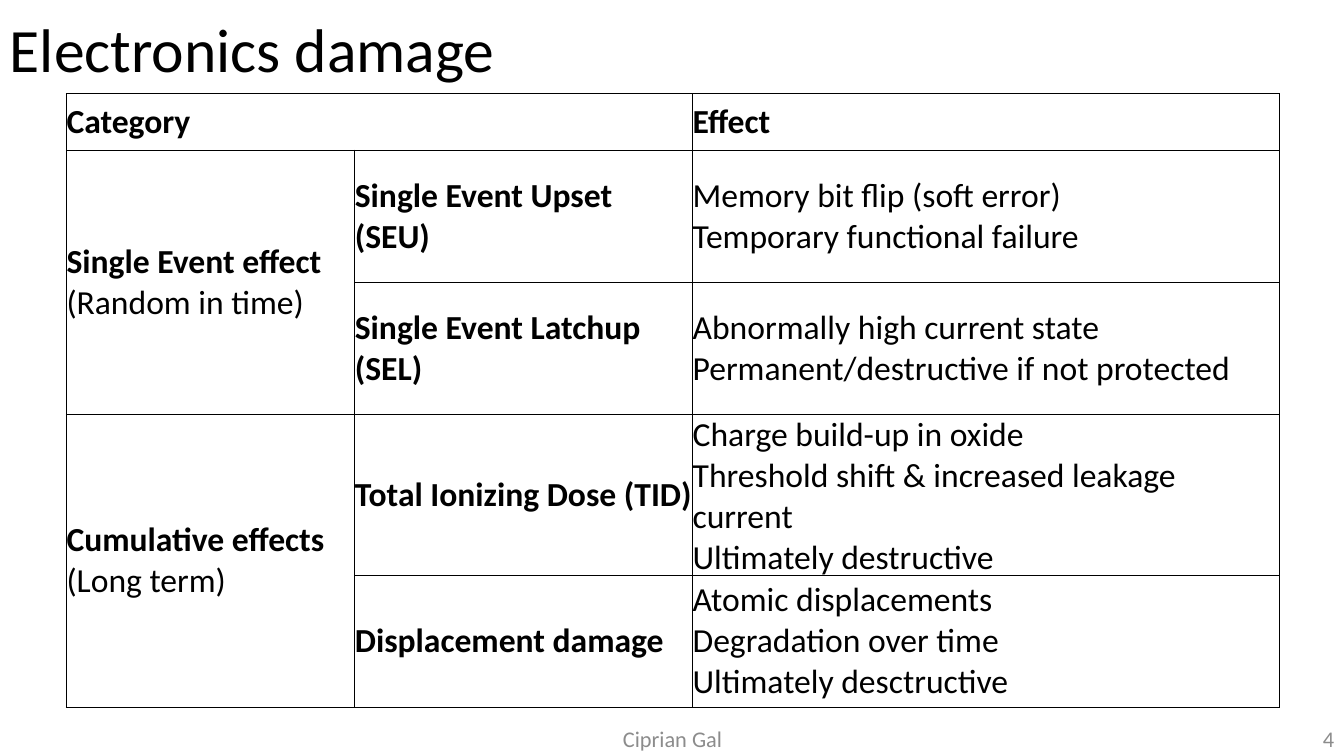
from lxml import etree
from pptx import Presentation
from pptx import util as u
from pptx.dml.color import RGBColor
from pptx.enum import text
from pptx.oxml.ns import qn

BLACK = RGBColor(0x00, 0x00, 0x00)
WHITE = RGBColor(0xFF, 0xFF, 0xFF)
GREY = RGBColor(0x8C, 0x8C, 0x8C)
LEFT, CENTER, RIGHT = text.PP_ALIGN.LEFT, text.PP_ALIGN.CENTER, text.PP_ALIGN.RIGHT
MIDDLE = text.MSO_ANCHOR.MIDDLE

COLUMNS = [286, 335, 582]
ROWS = [56, 131, 131, 131, 131]
MERGES = [((0, 0), (0, 1)), ((1, 0), (2, 0)), ((3, 0), (4, 0))]
DAMAGE = [
    ["Category", "", "Effect"],
    ["Single Event effect\n(Random in time)", "Single Event Upset (SEU)",
     "Memory bit flip (soft error)\vTemporary functional failure"],
    ["", "Single Event Latchup (SEL)",
     "Abnormally high current state\vPermanent/destructive if not protected"],
    ["Cumulative effects\n(Long term)", "Total Ionizing Dose (TID)",
     "Charge build-up in oxide\vThreshold shift & increased leakage current\vUltimately destructive"],
    ["", "Displacement damage",
     "Atomic displacements\vDegradation over time\vUltimately desctructive"],
]


def px(length):
    """Turn hundredths of an inch into EMU."""
    return u.Emu(length * 9144)


class Deck:
    """Holds the font and the current slide, and draws its elements."""

    def __init__(self, width, height, font):
        self.prs = Presentation()
        self.prs.slide_width, self.prs.slide_height = px(width), px(height)
        self.font = font
        self.slide = self.prs.slides.add_slide(self.prs.slide_layouts[6])

    def style(self, paragraph, size, color, bold=False):
        """Set the font of a whole paragraph."""
        font = paragraph.font
        font.name, font.size, font.bold = self.font, u.Pt(size), bold
        font.color.rgb = color

    def label(self, words, box, size, color, align=LEFT, spacing=1.0):
        """Add a line of text centred vertically in its box."""
        frame = self.slide.shapes.add_textbox(*map(px, box)).text_frame
        frame.word_wrap, frame.vertical_anchor = True, MIDDLE
        line = frame.paragraphs[0]
        line.text, line.alignment, line.line_spacing = words, align, spacing
        self.style(line, size, color)

    def border(self, cell):
        """Draw a thin black line on each side of a cell."""
        props = cell._tc.get_or_add_tcPr()
        for side in ("a:lnL", "a:lnR", "a:lnT", "a:lnB"):
            line = etree.SubElement(props, qn(side), w=str(u.Pt(1)))
            fill = etree.SubElement(line, qn("a:solidFill"))
            etree.SubElement(fill, qn("a:srgbClr"), val=str(BLACK))

    def cell(self, cell, words, size, bold):
        """Fill a cell; only its first paragraph may be bold."""
        cell.margin_left = cell.margin_right = cell.margin_top = cell.margin_bottom = 0
        cell.vertical_anchor = MIDDLE
        self.border(cell)
        cell.fill.solid()
        cell.fill.fore_color.rgb = WHITE
        for index, line in enumerate(words.split("\n")):
            frame = cell.text_frame
            paragraph = frame.add_paragraph() if index else frame.paragraphs[0]
            paragraph.text = line
            self.style(paragraph, size, BLACK, bold and index == 0)

    def table(self, left, top, columns, rows, content, merges, size):
        """Add a ruled table with bold headings and plain last-column text."""
        box = map(px, (left, top, sum(columns), sum(rows)))
        table = self.slide.shapes.add_table(len(rows), len(columns), *box).table
        table.first_row = table.horz_banding = False
        for column, width in zip(table.columns, columns):
            column.width = px(width)
        for row, height in zip(table.rows, rows):
            row.height = px(height)
        for first, last in merges:
            table.cell(*first).merge(table.cell(*last))
        for r, line in enumerate(content):
            for c, words in enumerate(line):
                heading = r == 0 or c < len(columns) - 1
                self.cell(table.cell(r, c), words, size, heading)


def main():
    """Build the slide and save it."""
    deck = Deck(1333, 750, "Calibri")
    deck.label("Electronics damage", (0, 0, 1333, 104), 44, BLACK, spacing=0.9)
    deck.label("Ciprian Gal", (442, 719, 450, 27), 16, GREY, CENTER)
    deck.label("4", (1033, 719, 300, 27), 16, GREY, RIGHT)
    deck.table(66, 93, COLUMNS, ROWS, DAMAGE, MERGES, 24)
    deck.prs.save("out.pptx")


if __name__ == "__main__":
    main()
